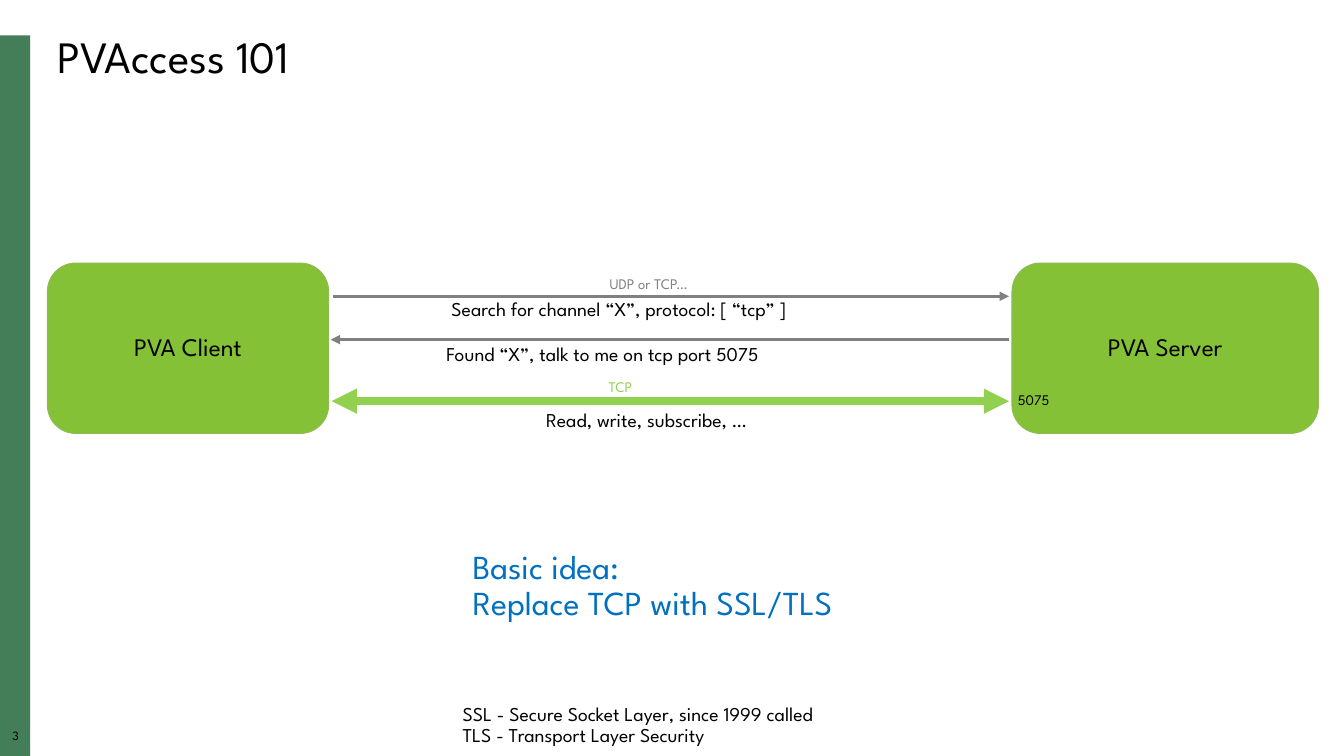
from pptx import Presentation
from pptx.dml.color import RGBColor
from pptx.enum.shapes import MSO_CONNECTOR as LINE, MSO_SHAPE as SHAPE
from pptx.enum.text import MSO_ANCHOR as ANCHOR, PP_ALIGN as ALIGN
from pptx.oxml.ns import qn
from pptx.util import Inches, Pt
from lxml.etree import SubElement

COLS, ROWS = 160, 90
BLACK, GREY, LIME, BLUE = "000000", "808080", "92D050", "0070C0"
RAIL, LEAF, LEAF_EDGE = "447E59", "85C136", "8FBB55"


def rgb(hex_code):
    return RGBColor.from_string(hex_code)


class Sketch:
    """Draws on one slide, measured in grid columns and rows."""
    font = "League Spartan"
    spacing = 0.9

    def __init__(self, prs):
        self.slide = prs.slides.add_slide(prs.slide_layouts[6])
        self.col = prs.slide_width / COLS
        self.row = prs.slide_height / ROWS

    def grid(self, x, y):
        return round(x * self.col), round(y * self.row)

    def fill_text(self, sp, text, size, color=BLACK, align=ALIGN.LEFT, inset=None):
        tf = sp.text_frame
        tf.text = text
        tf.word_wrap = True
        if inset is not None:
            tf.margin_left = tf.margin_right = Inches(inset)
            tf.margin_top = tf.margin_bottom = Inches(inset)
        for p in tf.paragraphs:
            p.alignment = align
            p.line_spacing = self.spacing
            for r in p.runs:
                r.font.name = self.font
                r.font.size = Pt(size)
                r.font.color.rgb = rgb(color)

    def text(self, x, y, w, h, text, size, color=BLACK, **style):
        sp = self.slide.shapes.add_textbox(*self.grid(x, y), *self.grid(w, h))
        self.fill_text(sp, text, size, color, **style)

    def shape(self, kind, x, y, w, h, fill, edge=None):
        sp = self.slide.shapes.add_shape(kind, *self.grid(x, y), *self.grid(w, h))
        sp.shadow.inherit = False
        sp.fill.solid()
        sp.fill.fore_color.rgb = rgb(fill)
        if edge:
            sp.line.color.rgb = rgb(edge)
            sp.line.width = Pt(0.75)
        else:
            sp.line.fill.background()
        return sp

    def node(self, x, w, label):
        sp = self.shape(SHAPE.ROUNDED_RECTANGLE, x, 31.32, w, 20.28, LEAF, LEAF_EDGE)
        self.fill_text(sp, label, 18, align=ALIGN.CENTER, inset=0.2)
        sp.text_frame.vertical_anchor = ANCHOR.MIDDLE

    def arrow(self, start, end, y, color, width, ends=("tailEnd",)):
        s = self.slide.shapes.add_connector(
            LINE.STRAIGHT, *self.grid(start, y), *self.grid(end, y))
        s.line.color.rgb = rgb(color)
        s.line.width = Pt(width)
        props = s._element.spPr
        for end_tag in ends:
            SubElement(props.find(qn("a:ln")), qn("a:" + end_tag), type="triangle")
        SubElement(props, qn("a:effectLst"))


def main():
    prs = Presentation()
    prs.slide_width, prs.slide_height = Inches(13.33), Inches(7.5)
    s = Sketch(prs)

    # Side rail, slide number and title
    s.shape(SHAPE.RECTANGLE, 0, 4.2, 3.6, 85.8, RAIL)
    s.text(0, 86.88, 3.72, 2.04, "3", 9, align=ALIGN.CENTER, inset=0)
    s.text(5.64, 3.6, 150, 7.08, "PVAccess 101", 32)

    # Both ends of the connection
    s.node(120.48, 36.48, "PVA Server")
    s.node(5.64, 33.48, "PVA Client")
    s.text(120, 46.2, 6.6, 3.24, "5075", 10.5)

    # Search request
    s.arrow(39.6, 120.12, 35.28, GREY, 2.25)
    s.text(71.4, 32.4, 13.56, 3.12, "UDP or TCP…", 10.5, GREY)
    s.text(52.56, 35.04, 51.12, 3.72, "Search for channel “X”, protocol: [ “tcp” ]", 14)

    # Search reply
    s.arrow(120.12, 39.36, 40.44, GREY, 2.25)
    s.text(51.96, 40.44, 61.56, 3.72, "Found “X”, talk to me on tcp port 5075", 14)

    # Data exchange
    s.arrow(120.12, 39.48, 47.76, LIME, 6, ("headEnd", "tailEnd"))
    s.text(71.28, 44.64, 6, 3.12, "TCP", 10.5, LIME)
    s.text(63.84, 48.24, 36.84, 3.72, "Read, write, subscribe, …", 14)

    # Basic idea and its terms
    s.text(55.08, 64.92, 51.12, 9.96, "Basic idea:\nReplace TCP with SSL/TLS", 24, BLUE)
    s.text(53.88, 83.28, 52.08, 6.36,
           "SSL - Secure Socket Layer, since 1999 called\n"
           "TLS - Transport Layer Security", 14)

    prs.save("out.pptx")


if __name__ == "__main__":
    main()
